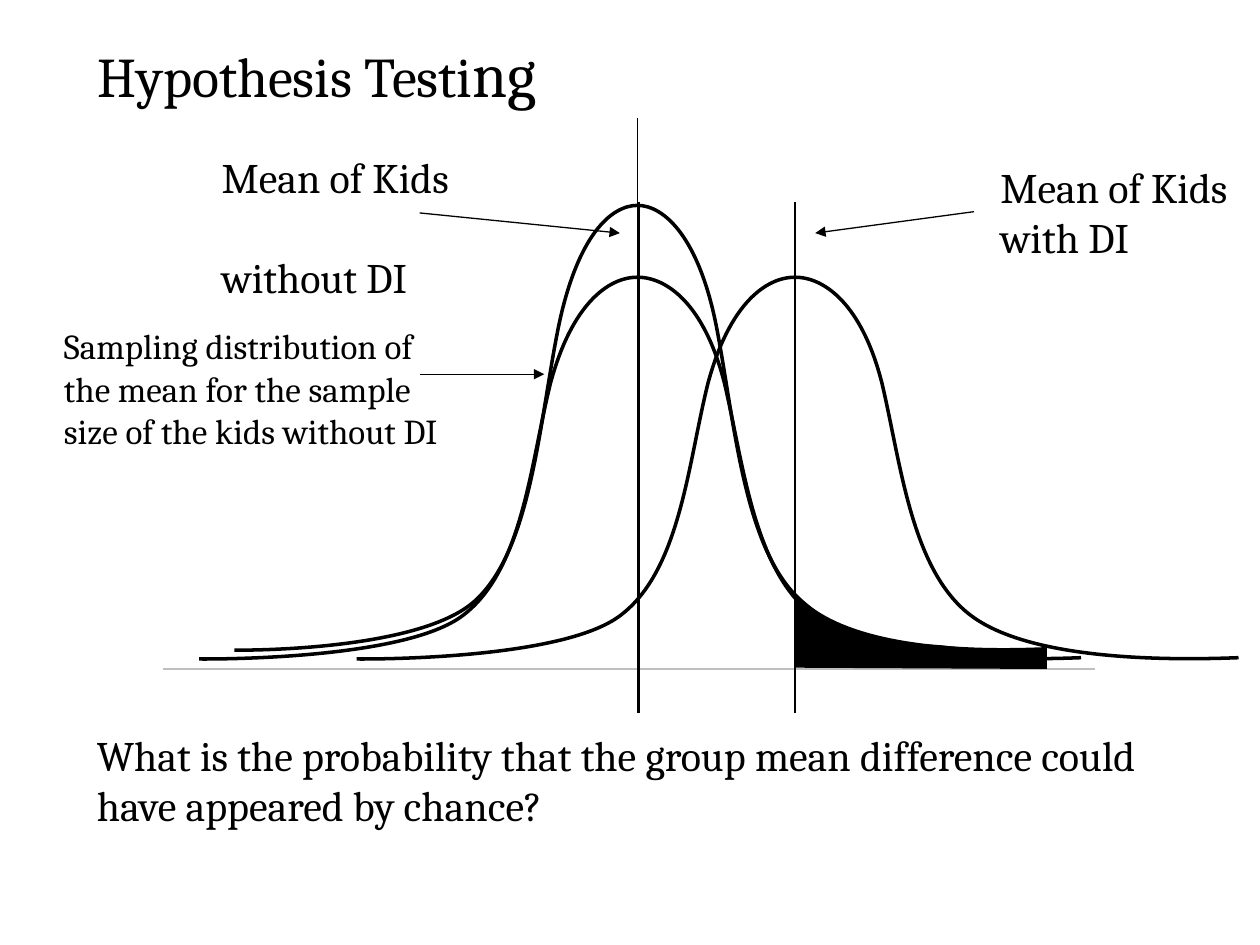
from dataclasses import dataclass

import pptx
import pptx.dml.color
import pptx.enum.shapes
import pptx.enum.text
import pptx.oxml
import pptx.oxml.ns
import pptx.util
from lxml import etree
from pptx.util import Inches


@dataclass(frozen=True)
class Theme:
    font: str = "Cambria"
    ink: str = "000000"
    axis: str = "BFBFBF"
    title: int = 32
    title_end: int = 36
    label: int = 24
    note: int = 20
    thin: float = 0.75
    line: float = 1
    curve: float = 2


THEME = Theme()

# Each curve: start point, then control, control and end points in turn.
POPULATION = [
    (8.58, 5.22), (8.06, 5.24), (6.93, 5.25), (6.45, 4.88),
    (5.98, 4.52), (5.9, 3.67), (5.75, 3.04),
    (5.59, 2.41), (5.29, 2.2), (5.06, 2.2),
    (4.83, 2.2), (4.54, 2.41), (4.37, 3.04),
    (4.21, 3.68), (4.15, 4.52), (3.68, 4.88),
    (3.21, 5.25), (1.58, 5.23), (1.58, 5.23),
]
SAMPLING = [
    (8.3, 5.15), (7.82, 5.17), (6.77, 5.18), (6.34, 4.75),
    (5.9, 4.33), (5.83, 3.34), (5.69, 2.61),
    (5.55, 1.88), (5.27, 1.63), (5.06, 1.63),
    (4.85, 1.63), (4.58, 1.87), (4.43, 2.61),
    (4.28, 3.36), (4.22, 4.33), (3.79, 4.75),
    (3.36, 5.18), (1.86, 5.16), (1.86, 5.16),
]
TAIL_AREA = [
    (6.31, 4.71), (6.44, 4.82), (6.56, 4.91), (6.71, 4.98), (6.87, 5.03),
    (7.03, 5.07), (7.24, 5.11), (7.45, 5.12), (7.64, 5.14), (7.86, 5.15),
    (8.03, 5.15), (8.18, 5.15), (8.31, 5.14), (8.31, 5.31), (6.31, 5.3),
]
MEAN_SHIFT = 1.25


def rgb(value):
    return pptx.dml.color.RGBColor.from_string(value)


def add_run(p, text, size):
    r = p.add_run()
    r.text = text
    for name, value in {"name": THEME.font, "size": pptx.util.Pt(size)}.items():
        setattr(r.font, name, value)
    r.font.color.rgb = rgb(THEME.ink)


def add_title(s, box, runs):
    sp = s.shapes.title
    for name, value in zip(("left", "top", "width", "height"), box):
        setattr(sp, name, Inches(value))
    tf = sp.text_frame
    tf.auto_size = pptx.enum.text.MSO_AUTO_SIZE.NONE
    tf.vertical_anchor = pptx.enum.text.MSO_ANCHOR.MIDDLE
    p = tf.paragraphs[0]
    p.alignment = pptx.enum.text.PP_ALIGN.LEFT
    for text, size in runs:
        add_run(p, text, size)


def add_text(s, box, lines, size, gap=0):
    """Add one paragraph per line, with gap points between them."""
    tf = s.shapes.add_textbox(*map(Inches, box)).text_frame
    tf.word_wrap = True
    for i, line in enumerate(lines):
        p = tf.add_paragraph() if i else tf.paragraphs[0]
        p.space_before = pptx.util.Pt(gap if i else 0)
        add_run(p, line, size)


def add_line(s, start, end, color=THEME.ink, width=THEME.line, arrow=False):
    sp = s.shapes.add_connector(pptx.enum.shapes.MSO_CONNECTOR.STRAIGHT,
                                *map(Inches, start + end))
    sp.line.color.rgb = rgb(color)
    sp.line.width = pptx.util.Pt(width)
    props = sp.line._get_or_add_ln()
    if arrow:
        props.append(pptx.oxml.parse_xml(
            f'<a:tailEnd {pptx.oxml.ns.nsdecls("a")} type="triangle"/>'))
    props.addnext(pptx.oxml.parse_xml(
        f'<a:effectLst {pptx.oxml.ns.nsdecls("a")}/>'))


def add_arrow(s, start, end):
    add_line(s, start, end, width=THEME.thin, arrow=True)


def add_outline(s, points, closed):
    points = [(Inches(x), Inches(y)) for x, y in points]
    builder = s.shapes.build_freeform(*points[0])
    builder.add_line_segments(points[1:], close=closed)
    sp = builder.convert_to_shape()
    sp.shadow.inherit = False
    return sp


def bend(sp):
    """Turn every three straight segments into one cubic Bezier segment."""
    qn = pptx.oxml.ns.qn
    segments = list(sp.element.iter(qn("a:lnTo")))
    for i in range(0, len(segments), 3):
        cubic = etree.Element(qn("a:cubicBezTo"))
        segments[i].addprevious(cubic)
        for segment in segments[i:i + 3]:
            cubic.append(segment[0])
            segment.getparent().remove(segment)


def add_curve(s, controls, shift=0):
    sp = add_outline(s, [(x + shift, y) for x, y in controls], closed=False)
    bend(sp)
    sp.fill.background()
    sp.line.color.rgb = rgb(THEME.ink)
    sp.line.width = pptx.util.Pt(THEME.curve)


def add_area(s, points):
    sp = add_outline(s, points, closed=True)
    sp.fill.solid()
    sp.fill.fore_color.rgb = rgb(THEME.ink)
    sp.line.fill.background()


def main():
    prs = pptx.Presentation()
    prs.slide_width, prs.slide_height = Inches(10), Inches(7.5)
    s = prs.slides.add_slide(prs.slide_layouts.get_by_name("Title Only"))

    add_title(s, (0.67, -0.05, 8.5, 1.25),
              [("Hypothesis Testi", THEME.title), ("ng", THEME.title_end)])

    add_line(s, (1.29, 5.31), (8.69, 5.31), THEME.axis)
    add_line(s, (5.06, 0.94), (5.06, 5.66))
    add_curve(s, SAMPLING)
    add_text(s, (0.41, 2.53, 3.17, 1.11),
             ["Sampling distribution of the mean for the sample size of the "
              "kids without DI"], THEME.note)
    add_arrow(s, (3.33, 2.97), (4.32, 2.97))

    add_line(s, (6.31, 1.6), (6.31, 5.66))
    add_curve(s, POPULATION, MEAN_SHIFT)
    add_text(s, (7.84, 1.23, 2.09, 0.91), ["Mean of Kids", "with DI"],
             THEME.label)
    add_arrow(s, (7.73, 1.68), (6.47, 1.85))

    add_line(s, (5.07, 1.6), (5.07, 5.66))
    add_curve(s, POPULATION)
    add_text(s, (1.66, 1.15, 2.05, 0.91), ["Mean of Kids", "without DI"],
             THEME.label, gap=28.5)
    add_arrow(s, (3.33, 1.69), (4.92, 1.85))

    add_area(s, TAIL_AREA)
    add_text(s, (0.67, 5.74, 8.87, 0.91),
             ["What is the probability that the group mean difference could "
              "have appeared by chance?"], THEME.label)
    prs.save("out.pptx")


if __name__ == "__main__":
    main()
